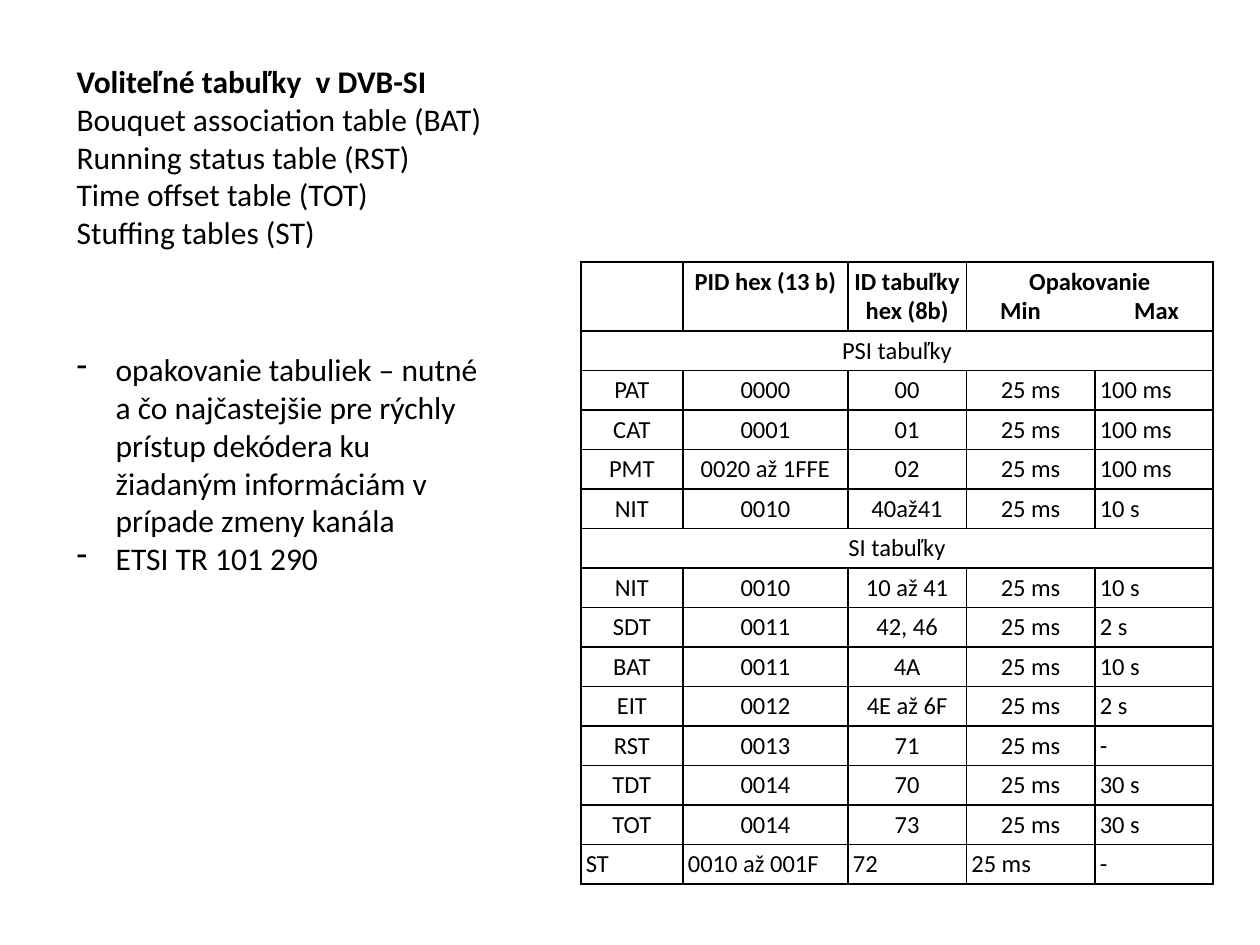
from dataclasses import dataclass
from typing import Any

from lxml.etree import SubElement
from pptx import Presentation
from pptx.dml.color import RGBColor
from pptx.enum.text import MSO_AUTO_SIZE as AutoSize, PP_ALIGN as Align
from pptx.oxml.ns import qn
from pptx.util import Inches, Pt

WIDTH, HEIGHT = Inches(10), Inches(7.5)
BLACK = "000000"
BODY = {"name": "Calibri", "size": Pt(18), "bold": False}
HEADING = {**BODY, "bold": True}
CELL = {**BODY, "size": Pt(14)}
HEADER = {**CELL, "bold": True}
MARGINS = {f"margin_{side}": Inches(0.04) for side in ("left", "right", "top", "bottom")}


@dataclass
class Area:
    left: float
    top: float
    width: float
    height: float

    def lengths(self) -> tuple[int, ...]:
        return (int(self.left * WIDTH), int(self.top * HEIGHT),
                int(self.width * WIDTH), int(self.height * HEIGHT))


@dataclass
class Line:
    text: str
    font: dict[str, Any]
    align: Any = Align.LEFT
    bullet: str = ""
    tabs: tuple[float, ...] = ()


INTRO = [
    Line("Voliteľné tabuľky  v DVB-SI", HEADING),
    Line("Bouquet association table (BAT)", BODY),
    Line("Running status table (RST)", BODY),
    Line("Time offset table (TOT)", BODY),
    Line("Stuffing tables (ST)", BODY),
]
NOTES = [
    Line("opakovanie tabuliek – nutné a čo najčastejšie pre rýchly prístup dekódera "
         "ku žiadaným informáciám v prípade zmeny kanála", BODY, bullet="-"),
    Line("ETSI TR 101 290", BODY, bullet="-"),
]
COLUMN_WIDTHS = (0.81, 1.31, 0.94, 1.02, 0.94)
HEADER_HEIGHT, ROW_HEIGHT = 0.55, 0.31
HEADERS = [
    [],
    [Line("PID hex (13 b)", HEADER, Align.CENTER)],
    [Line("ID tabuľky hex (8b)", HEADER, Align.CENTER)],
    [Line("Opakovanie", HEADER, Align.CENTER),
     Line("\tMin\tMax", HEADER, tabs=(0.39, 1.47))],
]
MINIMUM = "25 ms"
ROWS = [
    ("PSI tabuľky",),
    ("PAT", "0000", "00", MINIMUM, "100 ms"),
    ("CAT", "0001", "01", MINIMUM, "100 ms"),
    ("PMT", "0020 až 1FFE", "02", MINIMUM, "100 ms"),
    ("NIT", "0010", "40až41", MINIMUM, "10 s"),
    ("SI tabuľky",),
    ("NIT", "0010", "10 až 41", MINIMUM, "10 s"),
    ("SDT", "0011", "42, 46", MINIMUM, "2 s"),
    ("BAT", "0011", "4A", MINIMUM, "10 s"),
    ("EIT", "0012", "4E až 6F", MINIMUM, "2 s"),
    ("RST", "0013", "71", MINIMUM, "-"),
    ("TDT", "0014", "70", MINIMUM, "30 s"),
    ("TOT", "0014", "73", MINIMUM, "30 s"),
    ("ST", "0010 až 001F", "72", MINIMUM, "-"),
]


def color(value: str) -> RGBColor:
    return RGBColor.from_string(value)


def set_all(target: Any, values: dict[str, Any]) -> None:
    for name, value in values.items():
        setattr(target, name, value)


def write_lines(frame: Any, lines: list[Line]) -> None:
    for index, line in enumerate(lines):
        para = frame.paragraphs[0] if index == 0 else frame.add_paragraph()
        para.alignment = line.align
        span = para.add_run()
        span.text = line.text
        set_all(span.font, line.font)
        span.font.color.rgb = color(BLACK)
        properties = para._p.get_or_add_pPr()
        if line.bullet:
            indent = Inches(0.31)
            properties.set("marL", str(indent))
            properties.set("indent", str(-indent))
            SubElement(properties, qn("a:buChar"), char=line.bullet)
        if line.tabs:
            stops = SubElement(properties, qn("a:tabLst"))
            for stop in line.tabs:
                SubElement(stops, qn("a:tab"), pos=str(Inches(stop)), algn="ctr")


def add_text(page: Any, area: Area, lines: list[Line]) -> None:
    frame = page.shapes.add_textbox(*area.lengths()).text_frame
    frame.word_wrap = True
    frame.auto_size = AutoSize.SHAPE_TO_FIT_TEXT
    write_lines(frame, lines)


def style_cell(cell: Any) -> None:
    set_all(cell, MARGINS)
    properties = cell._tc.get_or_add_tcPr()
    for side in ("lnL", "lnR", "lnT", "lnB"):
        border = SubElement(properties, qn(f"a:{side}"), w=str(Pt(1)))
        SubElement(SubElement(border, qn("a:solidFill")), qn("a:srgbClr"), val=BLACK)
    cell.fill.background()


def add_timing_table(page: Any, area: Area) -> None:
    last_column, last_row = len(COLUMN_WIDTHS) - 1, len(ROWS)
    table = page.shapes.add_table(last_row + 1, last_column + 1, *area.lengths()).table
    set_all(table, {"first_row": False, "horz_banding": False})
    for column, width in zip(table.columns, COLUMN_WIDTHS):
        column.width = Inches(width)
    for index, row in enumerate(table.rows):
        row.height = Inches(ROW_HEIGHT if index else HEADER_HEIGHT)
    for cell in table.iter_cells():
        style_cell(cell)
    table.cell(0, 3).merge(table.cell(0, last_column))
    for column, lines in enumerate(HEADERS):
        write_lines(table.cell(0, column).text_frame, lines)
    for row, texts in enumerate(ROWS, start=1):
        if len(texts) == 1:
            table.cell(row, 0).merge(table.cell(row, last_column))
        for column, text in enumerate(texts):
            at_edge = row == last_row or column == last_column
            align = Align.LEFT if at_edge else Align.CENTER
            write_lines(table.cell(row, column).text_frame, [Line(text, CELL, align)])


def main() -> None:
    deck = Presentation()
    set_all(deck, {"slide_width": WIDTH, "slide_height": HEIGHT})
    page = deck.slides.add_slide(deck.slide_layouts[6])
    page.background.fill.solid()
    page.background.fill.fore_color.rgb = color("FFFFFF")
    add_text(page, Area(0.051, 0.059, 0.37, 0.216), INTRO)
    add_timing_table(page, Area(0.461, 0.277, 0.504, 0.661))
    add_text(page, Area(0.051, 0.364, 0.346, 0.296), NOTES)
    deck.save("out.pptx")


if __name__ == "__main__":
    main()
